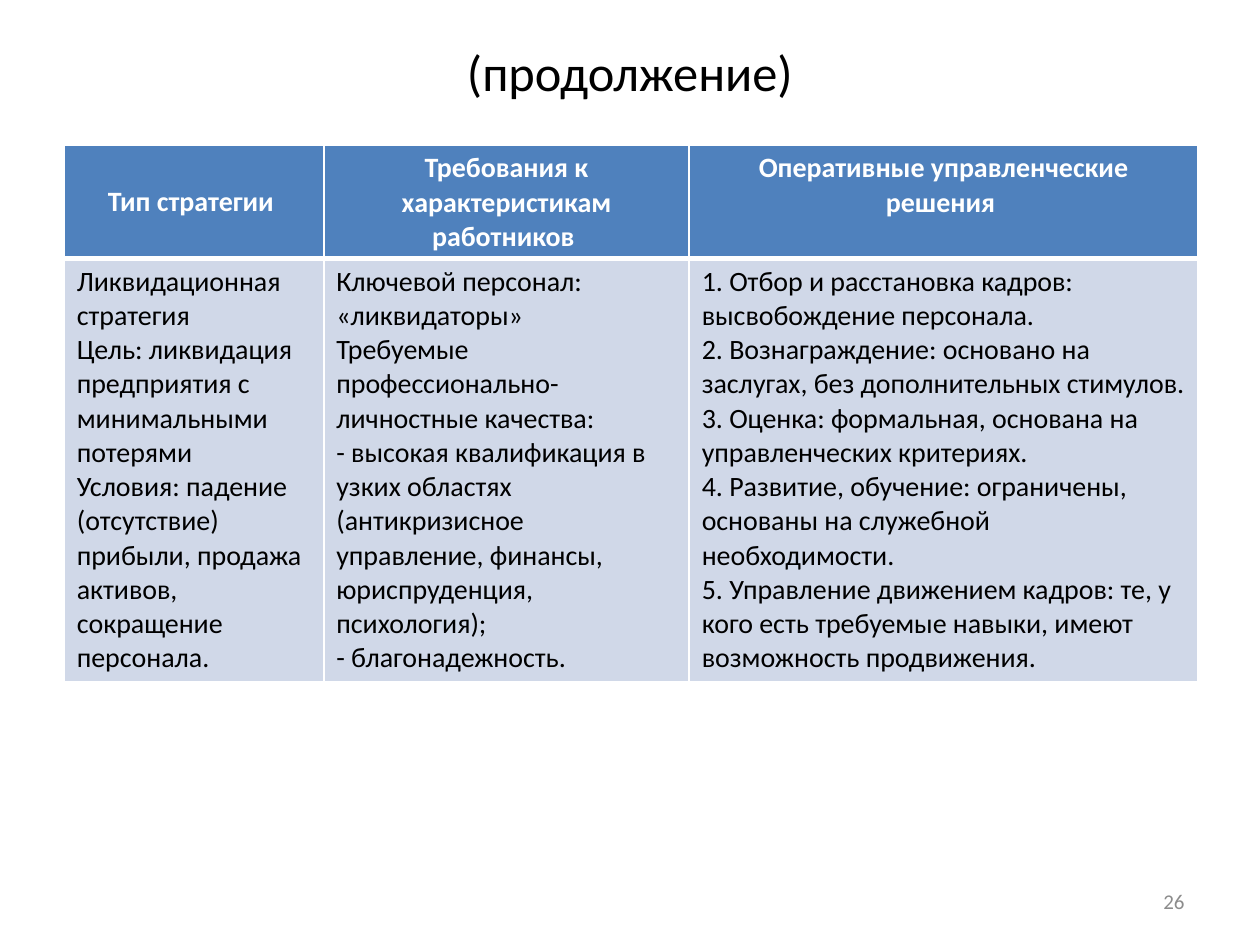
from lxml.etree import SubElement
from pptx import Presentation
from pptx.dml.color import RGBColor
from pptx.enum.text import MSO_ANCHOR as Anchor, PP_ALIGN as Align
from pptx.oxml.ns import qn
from pptx.util import Inches, Pt

BLACK = RGBColor(0x00, 0x00, 0x00)
WHITE = RGBColor(0xFF, 0xFF, 0xFF)
GREY = RGBColor(0x8C, 0x8C, 0x8C)
HEADER_BLUE = RGBColor(0x4F, 0x81, 0xBD)
BODY_BLUE = RGBColor(0xD0, 0xD8, 0xE8)

TITLE = "(продолжение)"
PAGE_NUMBER = "26"
COLUMNS = [
    (2.06, "Тип стратегии ", Anchor.MIDDLE, [
        "Ликвидационная стратегия",
        "Цель: ликвидация предприятия с минимальными потерями",
        "Условия: падение (отсутствие) прибыли, продажа активов, сокращение персонала.",
    ]),
    (2.9, "Требования к характеристикам работников ", Anchor.TOP, [
        "Ключевой персонал: «ликвидаторы»",
        "Требуемые профессионально-личностные качества:",
        "- высокая квалификация в узких областях (антикризисное управление, "
        "финансы, юриспруденция, психология);",
        "- благонадежность.",
    ]),
    (4.04, "Оперативные управленческие решения ", Anchor.TOP, [
        "1. Отбор и расстановка кадров: высвобождение персонала.",
        "2. Вознаграждение: основано на заслугах, без дополнительных стимулов.",
        "3. Оценка: формальная, основана на управленческих критериях.",
        "4. Развитие, обучение: ограничены, основаны на служебной необходимости.",
        "5. Управление движением кадров: те, у кого есть требуемые навыки, "
        "имеют возможность продвижения.",
    ]),
]
ROW_HEIGHTS = (0.9, 3.36)


def write(frame, lines, size=16, color=BLACK, bold=False, align=Align.LEFT):
    frame.word_wrap = True
    for index, line in enumerate(lines):
        paragraph = frame.add_paragraph() if index else frame.paragraphs[0]
        paragraph.alignment = align
        run = paragraph.add_run()
        run.text = line
        run.font.name = "Calibri"
        run.font.size = Pt(size)
        run.font.bold = bold
        run.font.color.rgb = color


def add_label(slide, text, box, **style):
    frame = slide.shapes.add_textbox(*map(Inches, box)).text_frame
    frame.vertical_anchor = Anchor.MIDDLE
    write(frame, [text], **style)


def style_cell(cell, fill, top=1, bottom=1):
    properties = cell._tc.get_or_add_tcPr()
    for side, width in (("L", 1), ("R", 1), ("T", top), ("B", bottom)):
        border = SubElement(properties, qn(f"a:ln{side}"), w=str(Pt(width)))
        SubElement(SubElement(border, qn("a:solidFill")), qn("a:srgbClr"), val=str(WHITE))
    cell.fill.solid()
    cell.fill.fore_color.rgb = fill


def add_strategy_table(slide):
    width = sum(column[0] for column in COLUMNS)
    table = slide.shapes.add_table(
        len(ROW_HEIGHTS), len(COLUMNS),
        Inches(0.51), Inches(1.15), Inches(width), Inches(sum(ROW_HEIGHTS)),
    ).table
    for row, height in zip(table.rows, ROW_HEIGHTS):
        row.height = Inches(height)
    for index, (column_width, heading, anchor, details) in enumerate(COLUMNS):
        table.columns[index].width = Inches(column_width)
        header, body = table.cell(0, index), table.cell(1, index)
        style_cell(header, HEADER_BLUE, bottom=3)
        style_cell(body, BODY_BLUE, top=3)
        header.vertical_anchor = anchor
        write(header.text_frame, [heading], color=WHITE, bold=True, align=Align.CENTER)
        write(body.text_frame, details)


def main():
    deck = Presentation()
    deck.slide_width, deck.slide_height = Inches(10), Inches(7.5)
    slide = deck.slides.add_slide(deck.slide_layouts[6])
    add_label(slide, TITLE, (0.5, 0.3, 9, 0.54), size=28.8, align=Align.CENTER)
    add_strategy_table(slide)
    add_label(slide, PAGE_NUMBER, (7.17, 6.95, 2.33, 0.4),
              size=12, color=GREY, align=Align.RIGHT)
    deck.save("out.pptx")


if __name__ == "__main__":
    main()
